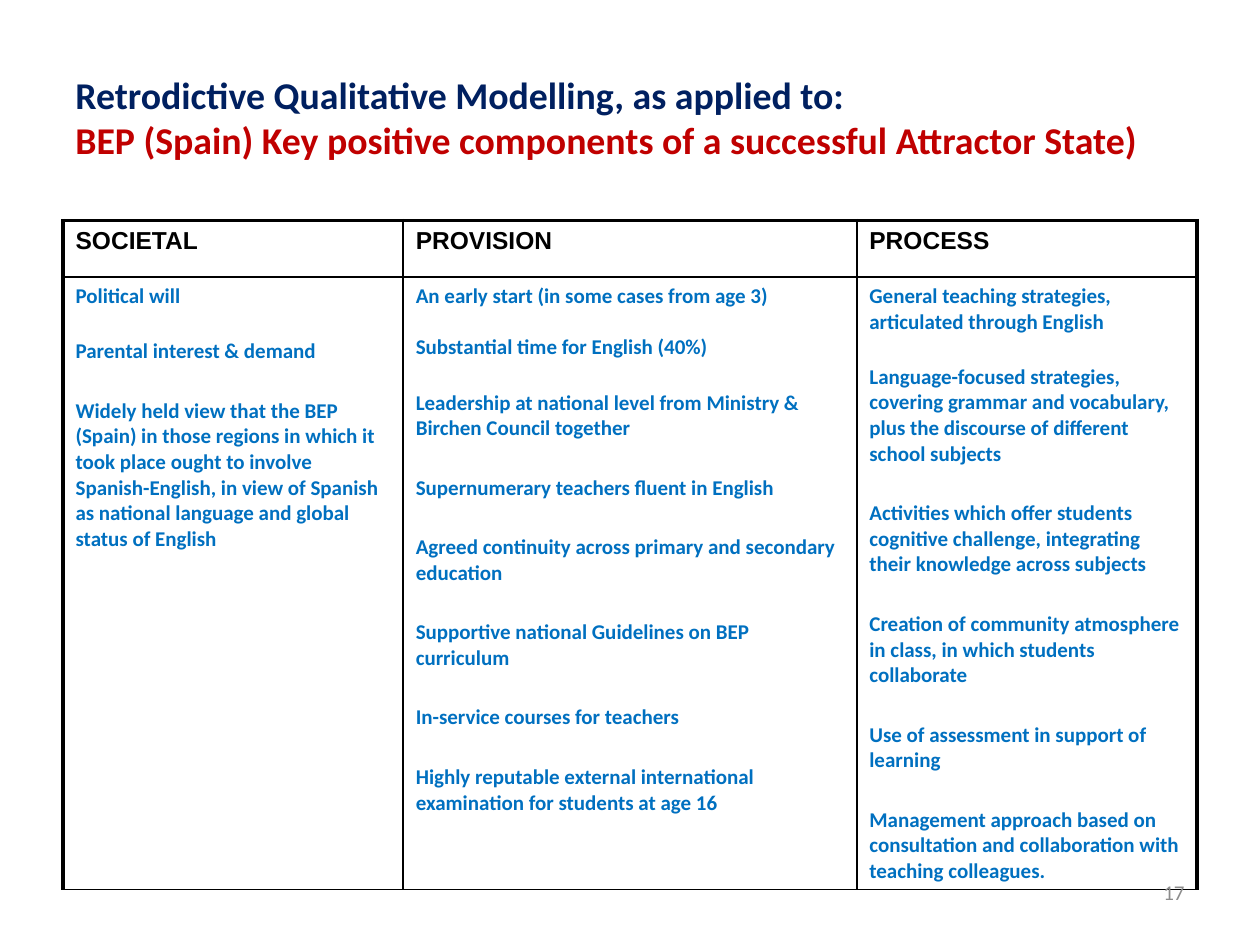
from lxml import etree
from pptx import Presentation
from pptx.dml.color import RGBColor
from pptx.enum.text import MSO_ANCHOR, PP_ALIGN
from pptx.oxml.ns import qn
from pptx.util import Pt

MIDDLE = MSO_ANCHOR.MIDDLE
LEFT, RIGHT = PP_ALIGN.LEFT, PP_ALIGN.RIGHT
PX = 9144  # 100 px to the inch
THIN, THICK = 1, 2.25
COLORS = {"navy": "002060", "red": "C00000", "blue": "0070C0",
          "black": "000000", "gray": "8C8C8C"}

# Space in points above an item: close, medium or wide
CLOSE, MID, WIDE = 14.65, 17, 19.4

# Heading, column width, leading gaps (the rest are wide), items
COLUMNS = [
    ("SOCIETAL", 270, [0, MID], [
        "Political will",
        "Parental interest & demand",
        "Widely held view that the BEP (Spain) in those regions in which it "
        "took place ought to involve Spanish-English, in view of Spanish as "
        "national language and global status of English",
    ]),
    ("PROVISION", 360, [0, CLOSE, MID], [
        "An early start (in some cases from age 3)",
        "Substantial time for English (40%)",
        "Leadership at national level from Ministry & Birchen Council together",
        "Supernumerary teachers fluent in English",
        "Agreed continuity across primary and secondary education",
        "Supportive national Guidelines on BEP curriculum",
        "In-service courses for teachers",
        "Highly reputable external international examination for students "
        "at age 16",
    ]),
    ("PROCESS", 270, [0, MID], [
        "General teaching strategies, articulated through English",
        "Language-focused strategies, covering grammar and vocabulary, plus "
        "the discourse of different school subjects",
        "Activities which offer students cognitive challenge, integrating "
        "their knowledge across subjects",
        "Creation of community atmosphere in class, in which students "
        "collaborate",
        "Use of assessment in support of learning",
        "Management approach based on consultation and collaboration with "
        "teaching colleagues.",
    ]),
]


def style(run, size, color, bold=True, face="Calibri"):
    font = run.font
    font.name, font.size, font.bold = face, Pt(size), bold
    font.color.rgb = RGBColor.from_string(COLORS[color])


def add_text(slide, box, text, align):
    """Add a wrapped, vertically centred text box; return its paragraph."""
    frame = slide.shapes.add_textbox(*(n * PX for n in box)).text_frame
    frame.word_wrap = True
    frame.vertical_anchor = MIDDLE
    para = frame.paragraphs[0]
    para.text = text
    para.alignment = align
    return para


def add_title(slide, box):
    para = add_text(
        slide, box,
        "Retrodictive Qualitative Modelling, as applied to:\v"
        "BEP (Spain) Key positive components of a successful Attractor State)",
        LEFT)
    for run, color in zip(para.runs, ("navy", "red")):
        style(run, 21.6, color)


def set_edges(cell, widths):
    """Draw the cell's borders from a dict of side and width in points."""
    props = cell._tc.get_or_add_tcPr()
    for side in "LRTB":
        line = etree.SubElement(props, qn(f"a:ln{side}"),
                                w=str(int(Pt(widths[side]))))
        fill = etree.SubElement(line, qn("a:solidFill"))
        etree.SubElement(fill, qn("a:srgbClr"), val=COLORS["black"])


def add_grid(slide, box, head):
    left, top, width, height = box
    last = len(COLUMNS) - 1
    table = slide.shapes.add_table(
        2, len(COLUMNS), *(n * PX for n in box)).table
    table.first_row = table.horz_banding = False
    table.rows[0].height = head * PX
    table.rows[1].height = (height - head) * PX

    for col, (name, wide, gaps, items) in enumerate(COLUMNS):
        table.columns[col].width = wide * PX

        # Borders: heavy on the left, top and right of the table
        for row in range(2):
            cell = table.cell(row, col)
            set_edges(cell, {"L": THIN if col else THICK,
                             "R": THICK if col == last else THIN,
                             "T": THIN if row else THICK,
                             "B": THIN})
            cell.fill.background()

        # Heading
        title = table.cell(0, col).text_frame
        title.text = name
        style(title.paragraphs[0].runs[0], 14, "black", face="Arial")

        # Items
        body = table.cell(1, col).text_frame
        body.text = "\n".join(items)
        for i, para in enumerate(body.paragraphs):
            para.space_before = Pt(gaps[i] if i < len(gaps) else WIDE)
            style(para.runs[0], 12, "blue")


def add_number(slide, box):
    para = add_text(slide, box, "17", RIGHT)
    style(para.runs[0], 12, "gray", bold=False)


def main():
    deck = Presentation()
    deck.slide_width, deck.slide_height = 1000 * PX, 750 * PX
    slide = deck.slides.add_slide(deck.slide_layouts[6])
    add_title(slide, (50, 30, 900, 125))
    add_grid(slide, (50, 175, 900, 531), head=45)
    add_number(slide, (717, 683, 233, 50))
    deck.save("out.pptx")


if __name__ == "__main__":
    main()
